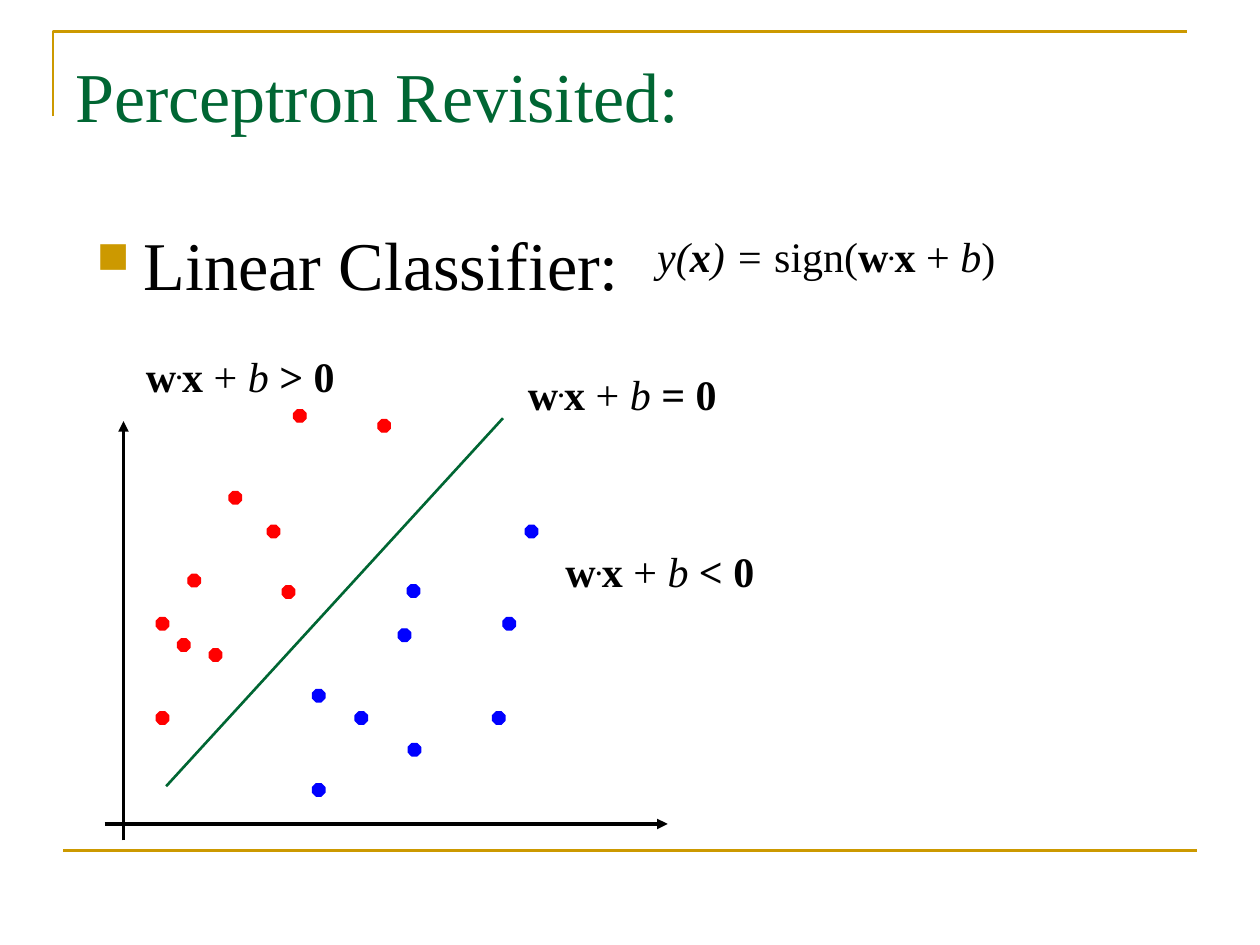
import pptx
import pptx.util
import pptx.dml.color
import pptx.enum.shapes
import pptx.enum.text
import pptx.oxml
import pptx.oxml.ns

Cm, Pt = pptx.util.Cm, pptx.util.Pt
SHAPE = pptx.enum.shapes.MSO_SHAPE
A_NS = pptx.oxml.ns.nsdecls("a")

GOLD, GREEN, BLACK, RED, BLUE = "CC9900", "006633", "000000", "FF0000", "0000FF"
FONT = "Times New Roman"
DOT_SIZE = 0.25

# Points of each class, in cm from the corner of the plot
POINTS = {
    RED: [(3.28, 3.73), (1.68, 4.72), (2.11, 6.22), (1.04, 7.49), (2.51, 3.05),
          (1.04, 5.59), (1.47, 6.02), (3.58, 4.95), (3.81, 1.4), (5.51, 1.6)],
    BLUE: [(6.1, 4.93), (5.05, 7.49), (7.82, 7.49), (4.19, 8.94), (5.92, 5.82),
           (4.19, 7.04), (6.12, 8.13), (8.03, 5.59), (8.48, 3.73)],
}

# Runs are (text, style): b bold, i italic, s superscript
DOT_PRODUCT = [("w", "b"), (".", "bs"), ("x ", "b"), ("+ ", ""), ("b", "i")]


def rgb(value):
    return pptx.dml.color.RGBColor.from_string(value)


def add_text(slide, box, runs, size=24, color=BLACK, top_inset=0.2, bullet=None):
    sp = slide.shapes.add_textbox(*map(Cm, box))
    tf = sp.text_frame
    tf.word_wrap = True
    tf.vertical_anchor = pptx.enum.text.MSO_ANCHOR.TOP
    tf.margin_top, tf.margin_bottom = Cm(top_inset), Cm(0.05)
    p = tf.paragraphs[0]
    for text, style in runs:
        r = p.add_run()
        r.text = text
        r.font.name, r.font.size = FONT, Pt(size)
        r.font.color.rgb = rgb(color)
        r.font.bold, r.font.italic = "b" in style, "i" in style
        if "s" in style:
            r.font._element.set("baseline", "30000")
    if bullet:
        pPr = p._p.get_or_add_pPr()
        pPr.set("marL", str(Cm(0.95)))
        pPr.set("indent", str(-Cm(0.95)))
        for xml in (f'<a:buClr {A_NS}><a:srgbClr val="{GOLD}"/></a:buClr>',
                    f'<a:buSzPct {A_NS} val="65000"/>',
                    f'<a:buChar {A_NS} char="{bullet}"/>'):
            pPr.append(pptx.oxml.parse_xml(xml))
    return sp


def add_line(slide, start, end, color, width, arrow=False):
    line = slide.shapes.add_connector(
        pptx.enum.shapes.MSO_CONNECTOR.STRAIGHT, *map(Cm, (*start, *end)))
    line.line.color.rgb = rgb(color)
    line.line.width = Pt(width)
    if arrow:
        line.line._get_or_add_ln().append(
            pptx.oxml.parse_xml(f'<a:tailEnd {A_NS} type="triangle"/>'))
    line._element.spPr.append(pptx.oxml.parse_xml(f"<a:effectLst {A_NS}/>"))


def add_frame(slide, x, y, w, h):
    # Corner rule above the title
    fb = slide.shapes.build_freeform(Cm(x), Cm(y + 1.7))
    fb.add_line_segments([(Cm(x), Cm(y)), (Cm(x + w), Cm(y))], close=False)
    sp = fb.convert_to_shape()
    sp.shadow.inherit = False
    sp.fill.background()
    sp.line.color.rgb = rgb(GOLD)
    sp.line.width = Pt(1.5)
    # Rule at the foot
    add_line(slide, (x + 0.2, y + h), (x + 0.2 + w, y + h), GOLD, 1.5)


def add_heading(slide, x, y, w):
    add_text(slide, (x, y, w, 3.18), [("Perceptron Revisited:", "")],
             size=40, color=GREEN, top_inset=0.3)
    add_text(slide, (x + 0.43, y + 3.43, w, 13.97), [("Linear Classifier:", "")],
             size=39, top_inset=0.29, bullet="■")
    add_text(slide, (x + 11.73, y + 3.69, 8.15, 1.27),
             [("y(", "i"), ("x", "bi"), (") = ", "i"), ("sign(", ""),
              *DOT_PRODUCT, (")", "")])


def add_plot(slide, x, y):
    # Axes and separating line
    add_line(slide, (x + 0.38, y + 10.08), (x + 0.38, y + 1.63), BLACK, 2, arrow=True)
    add_line(slide, (x, y + 9.75), (x + 11.35, y + 9.75), BLACK, 2, arrow=True)
    add_line(slide, (x + 1.24, y + 8.99), (x + 8.03, y + 1.57), GREEN, 1.5)
    # Data points
    for color, points in POINTS.items():
        for dx, dy in points:
            sp = slide.shapes.add_shape(
                SHAPE.OCTAGON, *map(Cm, (x + dx, y + dy, DOT_SIZE, DOT_SIZE)))
            sp.shadow.inherit = False
            sp.fill.solid()
            sp.fill.fore_color.rgb = sp.line.color.rgb = rgb(color)
            sp.line.width = Pt(0.75)
    # Region labels
    for dx, dy, relation in ((8.28, 0.36, " = 0"), (9.04, 3.94, " < 0"), (0.58, 0, " > 0")):
        add_text(slide, (x + dx, y + dy, 7.42, 1.27), [*DOT_PRODUCT, (relation, "b")])


def main():
    prs = pptx.Presentation()
    prs.slide_width, prs.slide_height = Cm(25.4), Cm(19.05)
    slide = prs.slides.add_slide(prs.slide_layouts[6])
    add_frame(slide, 1.07, 0.64, 22.86, 16.51)
    add_heading(slide, 1.27, 0.76, 22.86)
    add_plot(slide, 2.11, 6.86)
    prs.save("out.pptx")


if __name__ == "__main__":
    main()
